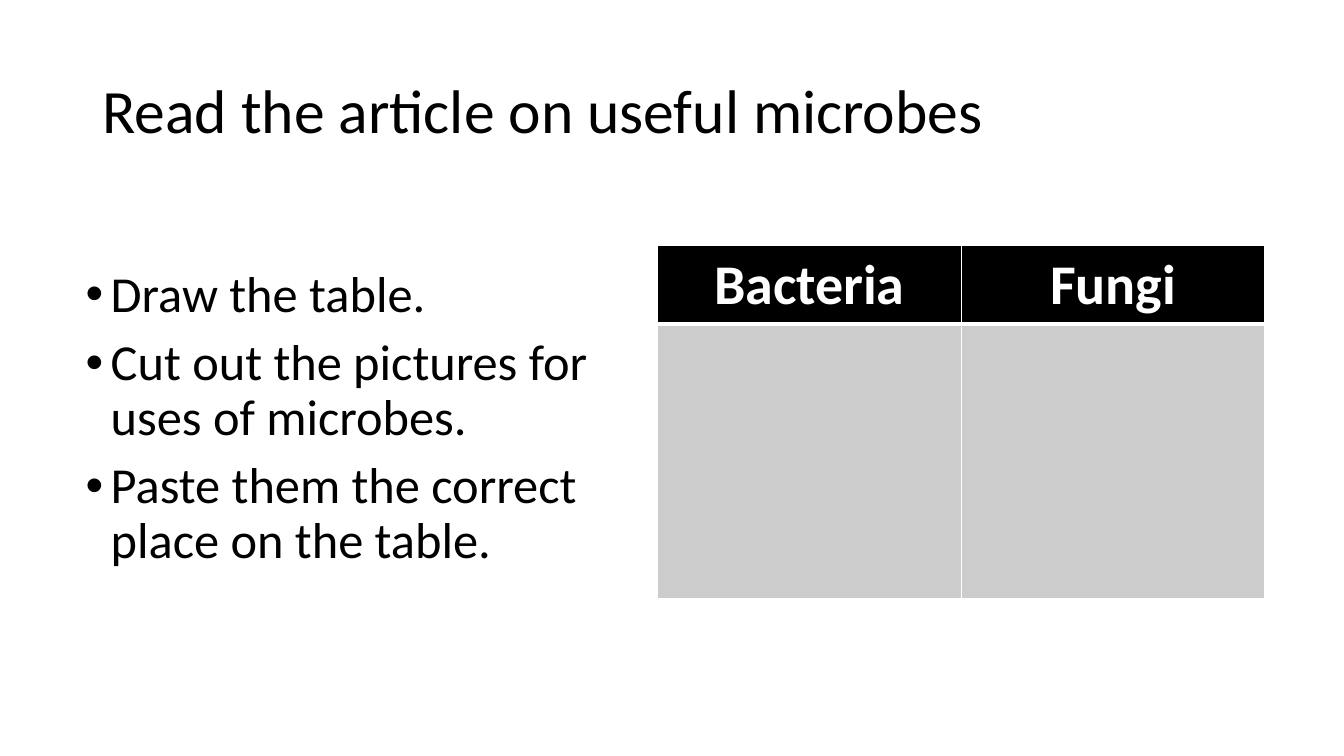
from lxml import etree
from pptx import Presentation
from pptx.dml.color import RGBColor
from pptx.enum.text import MSO_ANCHOR, MSO_AUTO_SIZE, PP_ALIGN
from pptx.oxml.ns import qn
from pptx.util import Pt

LEFT, CENTER = PP_ALIGN.LEFT, PP_ALIGN.CENTER
TOP, MIDDLE = MSO_ANCHOR.TOP, MSO_ANCHOR.MIDDLE
NO_AUTOFIT = MSO_AUTO_SIZE.NONE
TITLE_ONLY = 5

BLACK = RGBColor(0x00, 0x00, 0x00)
WHITE = RGBColor(0xFF, 0xFF, 0xFF)
GREY = RGBColor(0xCC, 0xCC, 0xCC)

STEPS = [
    "Draw the table.",
    "Cut out the pictures for uses of microbes.",
    "Paste them the correct place on the table.",
]
MICROBES = ["Bacteria", "Fungi"]
ROW_HEIGHTS = [51, 196]
HEADER_BORDERS = {"lnL": 1, "lnR": 1, "lnT": 1, "lnB": 3}
BODY_BORDERS = {"lnL": 1, "lnR": 1, "lnT": 3, "lnB": 1}


def set_all(target, formats):
    for name, value in formats.items():
        setattr(target, name, value)


def write(para, text, size, color, bold=False, **para_formats):
    set_all(para, para_formats)
    span = para.add_run()
    span.text = text
    set_all(span.font, {"name": "Calibri", "size": Pt(size), "bold": bold})
    span.font.color.rgb = color


def add_bullet(para, indent):
    props = para._p.get_or_add_pPr()
    props.set("marL", str(Pt(indent)))
    props.set("indent", str(-Pt(indent)))
    etree.SubElement(props, qn("a:buFont")).set("typeface", "Arial")
    etree.SubElement(props, qn("a:buChar")).set("char", "•")


def add_borders(cell, widths):
    props = cell._tc.get_or_add_tcPr()
    for side, width in widths.items():
        line = etree.SubElement(props, qn(f"a:{side}"), w=str(Pt(width)))
        fill = etree.SubElement(line, qn("a:solidFill"))
        etree.SubElement(fill, qn("a:srgbClr"), val=str(WHITE))


def add_title(page, text):
    title = page.shapes.title
    set_all(title, {"left": Pt(66), "top": Pt(28.75),
                    "width": Pt(828), "height": Pt(104.4)})
    frame = title.text_frame
    set_all(frame, {"vertical_anchor": MIDDLE, "word_wrap": True,
                    "auto_size": NO_AUTOFIT})
    write(frame.paragraphs[0], text, 44, BLACK,
          alignment=LEFT, line_spacing=0.9)


def add_steps(page, steps):
    box = page.shapes.add_textbox(Pt(54), Pt(188.6), Pt(381), Pt(231))
    frame = box.text_frame
    set_all(frame, {"vertical_anchor": TOP, "word_wrap": True,
                    "auto_size": NO_AUTOFIT})
    for index, step in enumerate(steps):
        para = frame.add_paragraph() if index else frame.paragraphs[0]
        write(para, step, 36, BLACK, alignment=LEFT,
              line_spacing=0.9, space_before=Pt(10))
        add_bullet(para, 18)


def add_microbe_table(page, headings):
    table = page.shapes.add_table(
        len(ROW_HEIGHTS), len(headings),
        Pt(469.6), Pt(175.6), Pt(434), Pt(sum(ROW_HEIGHTS))).table
    for row, height in zip(table.rows, ROW_HEIGHTS):
        row.height = Pt(height)
    for column, heading in enumerate(headings):
        header, body = table.cell(0, column), table.cell(1, column)
        write(header.text_frame.paragraphs[0], heading, 40, WHITE,
              bold=True, alignment=CENTER)
        for cell, borders, color in ((header, HEADER_BORDERS, BLACK),
                                     (body, BODY_BORDERS, GREY)):
            add_borders(cell, borders)
            cell.fill.solid()
            cell.fill.fore_color.rgb = color


def main():
    deck = Presentation()
    set_all(deck, {"slide_width": Pt(960), "slide_height": Pt(540)})
    page = deck.slides.add_slide(deck.slide_layouts[TITLE_ONLY])
    add_title(page, "Read the article on useful microbes")
    add_steps(page, STEPS)
    add_microbe_table(page, MICROBES)
    deck.save("out.pptx")


if __name__ == "__main__":
    main()
